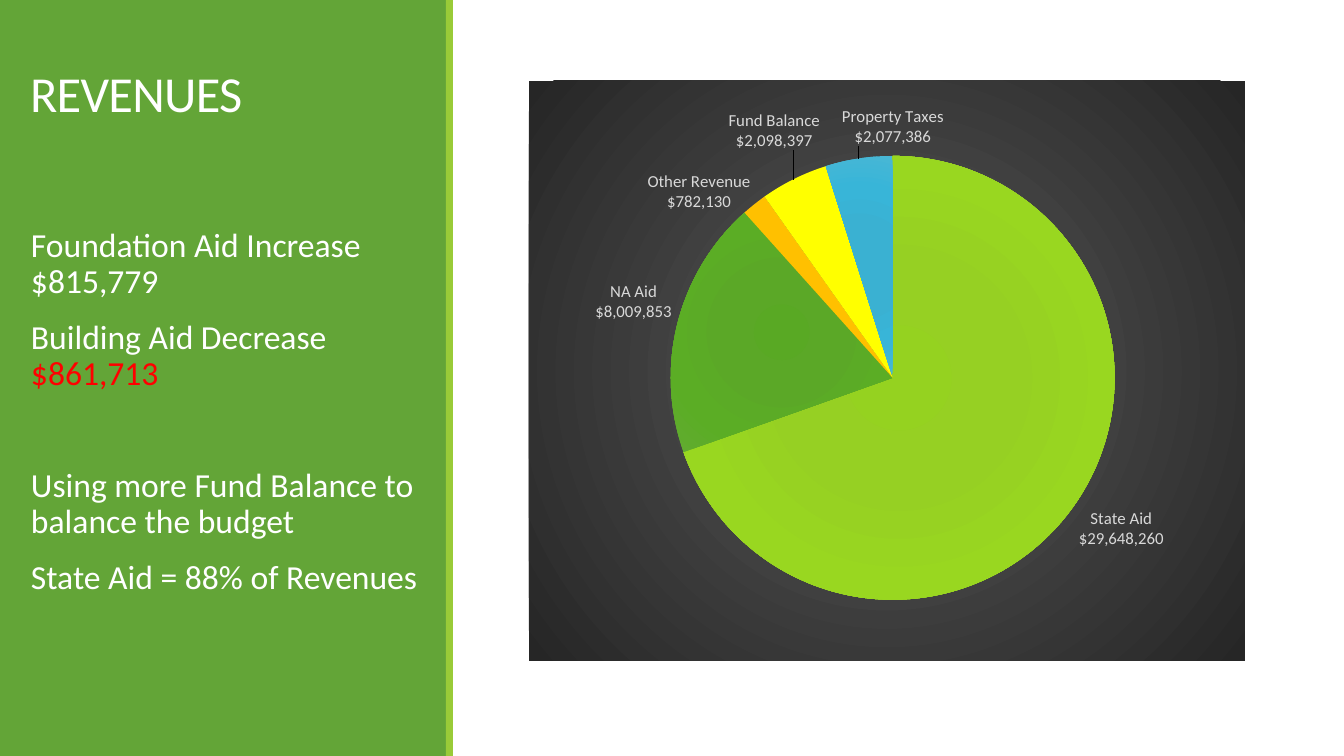
import copy
from dataclasses import dataclass

import pptx
import pptx.chart.data
import pptx.dml.color
import pptx.enum.chart
import pptx.enum.shapes
import pptx.enum.text
import pptx.oxml
import pptx.oxml.ns
import pptx.util

EMU_PER_PX = 914400 / 100.8


@dataclass(frozen=True)
class Theme:
    font: str = "Calibri"
    panel: str = "63A537"
    stripe: str = "99CB38"
    text: str = "FFFFFF"
    decrease: str = "FF0000"
    chart_label: str = "D9D9D9"
    chart_area: tuple = ((0, "595959"), (100, "262626"))
    title_size: int = 36
    body_size: int = 24
    label_size: int = 12


THEME = Theme()

# Name, amount, fill (a colour or gradient stops), label shift as chart fractions
REVENUES = [
    ("State Aid", 29648260,
     ((0, "95D220"), (34, "96D023"), (70, "99D720"), (100, "9BD231")), None),
    ("NA Aid", 8009853,
     ((0, "59A924"), (34, "5BA827"), (70, "5BAD25"), (100, "62AB31")), None),
    ("Other Revenue", 782130, "FFC000", (0, 0.02)),
    ("Fund Balance", 2098397, "FFFF00", (0.04, -0.04)),
    ("Property Taxes", 2077386,
     ((0, "37B1D3"), (34, "3AB1D2"), (70, "38B5D8"), (100, "48B7D5")), (0.12, -0.01)),
]

# Space before in points, then runs of text and colour
NOTES = [
    (0, [("Foundation Aid Increase $815,779", THEME.text)]),
    (12, [("Building Aid Decrease ", THEME.text), ("$861,713", THEME.decrease)]),
    (52, [("Using more Fund Balance to balance the budget", THEME.text)]),
    (12, [("State Aid = 88% of Revenues", THEME.text)]),
]


def px(length):
    return pptx.util.Emu(round(length * EMU_PER_PX))


def rgb(colour):
    return pptx.dml.color.RGBColor.from_string(colour)


def chart_xml(tag, body):
    return pptx.oxml.parse_xml(
        f'<{tag} {pptx.oxml.ns.nsdecls("c", "a")}>{body}</{tag}>')


def radial_fill(stops, focus):
    """Circular gradient whose fill rectangle is inset by focus percent on each side."""
    stop_list = "".join(
        f'<a:gs pos="{pos * 1000}"><a:srgbClr val="{colour}"/></a:gs>'
        for pos, colour in stops)
    insets = " ".join(f'{side}="{focus * 1000}"' for side in "ltrb")
    return chart_xml("a:gradFill", f'<a:gsLst>{stop_list}</a:gsLst>'
                     f'<a:path path="circle"><a:fillToRect {insets}/></a:path>')


def manual_layout(**settings):
    items = "".join(f'<c:{key} val="{value}"/>' for key, value in settings.items())
    return chart_xml("c:layout", f"<c:manualLayout>{items}</c:manualLayout>")


def add_run(paragraph, text, size, colour):
    run = paragraph.add_run()
    run.text = text
    run.font.name = THEME.font
    run.font.size = pptx.util.Pt(size)
    run.font.color.rgb = rgb(colour)
    return run


def set_frame(frame):
    frame.word_wrap = True
    frame.auto_size = pptx.enum.text.MSO_AUTO_SIZE.NONE
    frame.vertical_anchor = pptx.enum.text.MSO_ANCHOR.TOP
    frame.margin_left = frame.margin_right = px(10)
    frame.margin_top = frame.margin_bottom = px(5)


def add_band(slide, left, top, width, height, colour):
    band = slide.shapes.add_shape(pptx.enum.shapes.MSO_SHAPE.RECTANGLE,
                                  px(left), px(top), px(width), px(height))
    band.shadow.inherit = False
    band.fill.solid()
    band.fill.fore_color.rgb = rgb(colour)
    band.line.fill.background()


def add_side_panel(slide, left, top, width, height):
    stripe_width = 7
    add_band(slide, left, top, width - stripe_width, height, THEME.panel)
    add_band(slide, left + width - stripe_width, top, stripe_width, height, THEME.stripe)

    title = slide.shapes.title
    slide.shapes._spTree.append(title._element)
    title.left, title.top = px(left + 20), px(top + 66)
    title.width, title.height = px(width - 46), px(140)
    set_frame(title.text_frame)
    heading = title.text_frame.paragraphs[0]
    heading.alignment = pptx.enum.text.PP_ALIGN.LEFT
    heading.line_spacing = 0.85
    run = add_run(heading, "REVENUES", THEME.title_size, THEME.text)
    run.font._element.set("spc", "-50")

    notes = slide.shapes.add_textbox(px(left + 21), px(top + 223),
                                     px(width - 37), px(height - 279)).text_frame
    set_frame(notes)
    for index, (space_before, runs) in enumerate(NOTES):
        paragraph = notes.add_paragraph() if index else notes.paragraphs[0]
        paragraph.line_spacing = 0.9
        paragraph.space_before = pptx.util.Pt(space_before)
        paragraph.space_after = pptx.util.Pt(2)
        for text, colour in runs:
            add_run(paragraph, text, THEME.body_size, colour)


def label_slices(series):
    labels = series.data_labels
    labels.show_value = labels.show_category_name = True
    labels.show_percentage = labels.show_legend_key = False
    labels.number_format = '"$"#,##0'
    labels.number_format_is_linked = False
    labels.position = pptx.enum.chart.XL_LABEL_POSITION.OUTSIDE_END
    labels.font.name = THEME.font
    labels.font.size = pptx.util.Pt(THEME.label_size)
    labels.font.color.rgb = rgb(THEME.chart_label)
    group = labels._element
    for leader_lines in group.xpath("c:showLeaderLines"):
        group.remove(leader_lines)
    group.append(chart_xml("c:separator", "\n"))

    shared = list(group)
    shifts = [(index, item[3]) for index, item in enumerate(REVENUES) if item[3]]
    for place, (index, (dx, dy)) in enumerate(shifts):
        label = chart_xml("c:dLbl", f'<c:idx val="{index}"/>')
        label.append(manual_layout(x=dx, y=dy))
        label.extend(copy.deepcopy(part) for part in shared)
        group.insert(place, label)


def add_revenue_pie(slide, left, top, width, height):
    data = pptx.chart.data.CategoryChartData()
    data.categories = [item[0] for item in REVENUES]
    data.add_series("Series 1", [item[1] for item in REVENUES])
    chart = slide.shapes.add_chart(pptx.enum.chart.XL_CHART_TYPE.PIE, px(left), px(top),
                                   px(width), px(height), data).chart
    chart.has_title = chart.has_legend = False
    chart.font.name = THEME.font
    chart.font.size = pptx.util.Pt(10)

    area = chart_xml("c:spPr", "")
    area.append(radial_fill(THEME.chart_area, 50))
    area.append(chart_xml("a:ln", "<a:noFill/>"))
    space = chart._chartSpace
    space.xpath("c:chart")[0].addnext(area)

    plot_area = space.xpath("c:chart/c:plotArea")[0]
    for layout in plot_area.xpath("c:layout"):
        plot_area.remove(layout)
    plot_area.insert(0, manual_layout(layoutTarget="inner", xMode="edge", yMode="edge",
                                      x=0.198, y=0.129, w=0.62, h=0.766))

    plot = chart.plots[0]
    plot.vary_by_categories = True
    series = plot.series[0]
    for index, (_, _, fill, _) in enumerate(REVENUES):
        slice_format = series.points[index].format
        slice_format.line.fill.background()
        if isinstance(fill, str):
            slice_format.fill.solid()
            slice_format.fill.fore_color.rgb = rgb(fill)
        else:
            slice_format.fill.gradient()
            linear = series._element.xpath(
                f"c:dPt[c:idx/@val={index}]/c:spPr/a:gradFill")[0]
            linear.getparent().replace(linear, radial_fill(fill, 100))
    label_slices(series)


def main():
    deck = pptx.Presentation()
    deck.slide_width, deck.slide_height = px(1344), px(756)
    slide = deck.slides.add_slide(deck.slide_layouts.get_by_name("Title Only"))
    add_side_panel(slide, 0, 0, 453, 756)
    add_revenue_pie(slide, 529, 81, 716, 580)
    deck.save("out.pptx")


if __name__ == "__main__":
    main()
